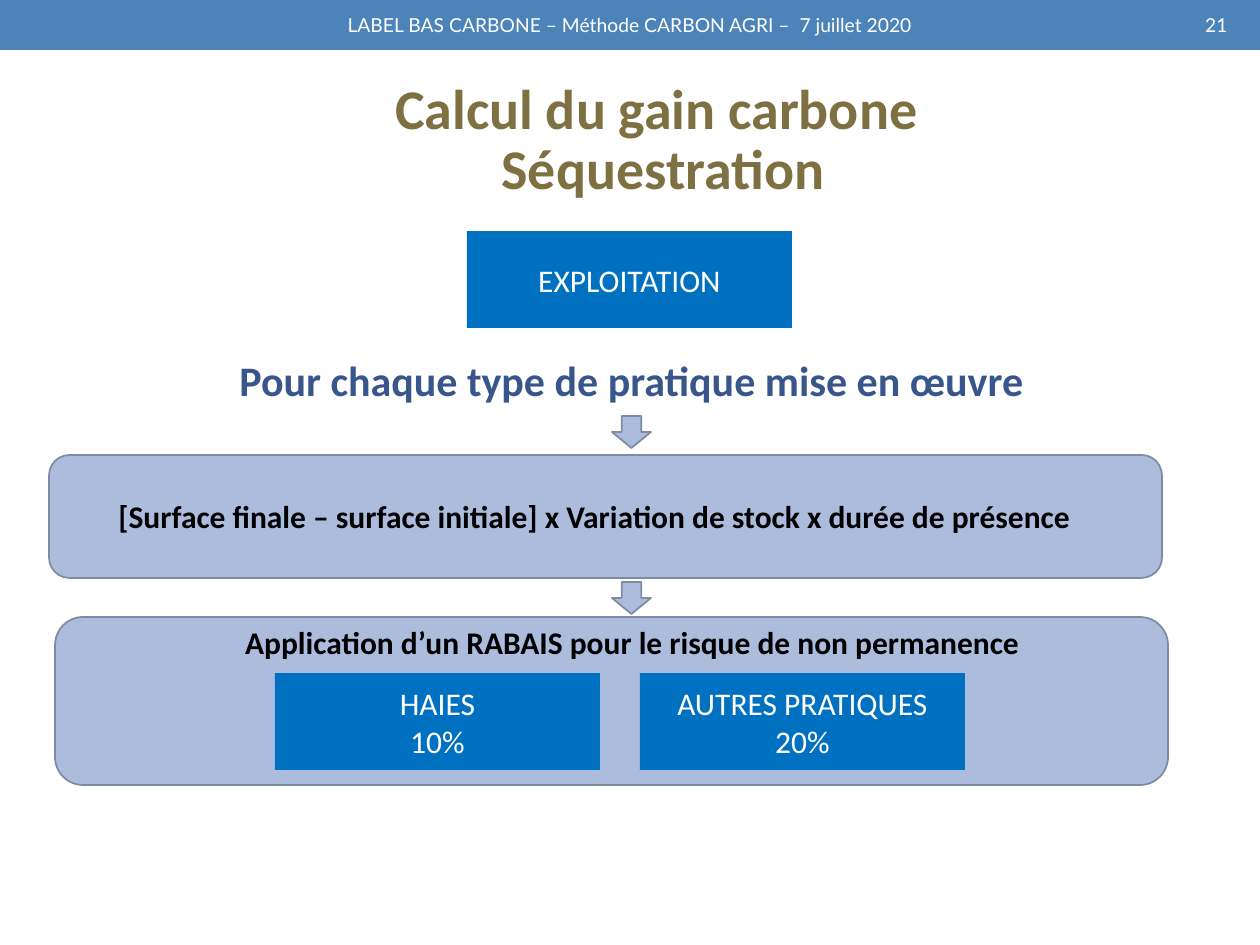
"""Build the slide on computing the carbon gain from sequestration."""
import pptx
import pptx.util
import pptx.dml.color
import pptx.enum.shapes
import pptx.enum.text
import lxml.etree

PX = 914400 / 126
SHAPE = pptx.enum.shapes.MSO_SHAPE
ALIGN = pptx.enum.text.PP_ALIGN
ANCHOR = pptx.enum.text.MSO_ANCHOR
COLORS = {"header": "00509E", "title": "7F7042", "box": "0070C0", "panel": "ABBCDD",
          "edge": "7F8BA3", "heading": "38558C", "white": "FFFFFF", "black": "000000"}

HEADER = (0, 0, 1260, 50)
BOX_SIZE = (325, 97)
BOXES = [("EXPLOITATION", 467, 231), ("HAIES\n10%", 275, 673),
         ("AUTRES PRATIQUES\n20%", 640, 673)]
PANELS = [(49, 455, 1113, 123), (55, 617, 1113, 168)]
ARROW_LEFT, ARROW_SIZE, ARROW_TOPS = 612, (39, 32), (416, 582)
SMALL = dict(size=11, font="Lato", color="white")
LABEL = dict(size=18, color="black", bold=True, wrap=False, anchor=ANCHOR.TOP)
TEXTS = [
    ("Calcul du gain carbone \vSéquestration", (87, 50, 1152, 183),
     dict(size=32, color="title", bold=True, spacing=0.9)),
    ("LABEL BAS CARBONE – Méthode CARBON AGRI –  7 juillet 2020", (87, 0, 1086, 50), SMALL),
    ("21", (1173, 0, 87, 50), SMALL),
    ("Pour chaque type de pratique mise en œuvre", (227, 348, 825, 63),
     dict(LABEL, size=24, color="heading", align=ALIGN.LEFT)),
    ("[Surface finale – surface initiale] x Variation de stock x durée de présence",
     (106, 491, 987, 50), dict(LABEL, align=ALIGN.LEFT)),
    ("Application d’un RABAIS pour le risque de non permanence", (231, 617, 803, 50), LABEL),
]


def rgb(name):
    return pptx.dml.color.RGBColor.from_string(COLORS[name])


def emu(rect):
    return [round(v * PX) for v in rect]


def add_shape(s, kind, rect, fill, line=None):
    sp = s.shapes.add_shape(kind, *emu(rect))
    sp.shadow.inherit = False
    sp.fill.solid()
    sp.fill.fore_color.rgb = rgb(fill)
    if line:
        sp.line.color.rgb = rgb(line)
        sp.line.width = pptx.util.Pt(1)
    else:
        sp.line.fill.background()
    return sp


def write(sp, text, size=18, font="Calibri", color="white", bold=False,
          align=ALIGN.CENTER, anchor=ANCHOR.MIDDLE, wrap=True, spacing=None):
    tf = sp.text_frame
    tf.word_wrap = wrap
    tf.vertical_anchor = anchor
    tf.text = text
    for p in tf.paragraphs:
        p.alignment = align
        if spacing:
            p.line_spacing = spacing
        for r in p.runs:
            r.font.size = pptx.util.Pt(size)
            r.font.name = font
            r.font.bold = bold
            r.font.color.rgb = rgb(color)


def main():
    prs = pptx.Presentation()
    prs.slide_width, prs.slide_height = pptx.util.Inches(10), pptx.util.Inches(7.5)
    s = prs.slides.add_slide(prs.slide_layouts[6])

    header = add_shape(s, SHAPE.RECTANGLE, HEADER, "header")
    color = header.fill._xPr.find(".//{*}srgbClr")
    tag = lxml.etree.QName(color).namespace
    lxml.etree.SubElement(color, f"{{{tag}}}alpha", val="70000")

    for rect in PANELS:
        add_shape(s, SHAPE.ROUNDED_RECTANGLE, rect, "panel", "edge")
    for top in ARROW_TOPS:
        add_shape(s, SHAPE.DOWN_ARROW, (ARROW_LEFT, top, *ARROW_SIZE), "panel", "edge")
    for text, left, top in BOXES:
        write(add_shape(s, SHAPE.RECTANGLE, (left, top, *BOX_SIZE), "box"), text)
    for text, rect, style in TEXTS:
        write(s.shapes.add_textbox(*emu(rect)), text, **style)

    prs.save("out.pptx")


if __name__ == "__main__":
    main()
